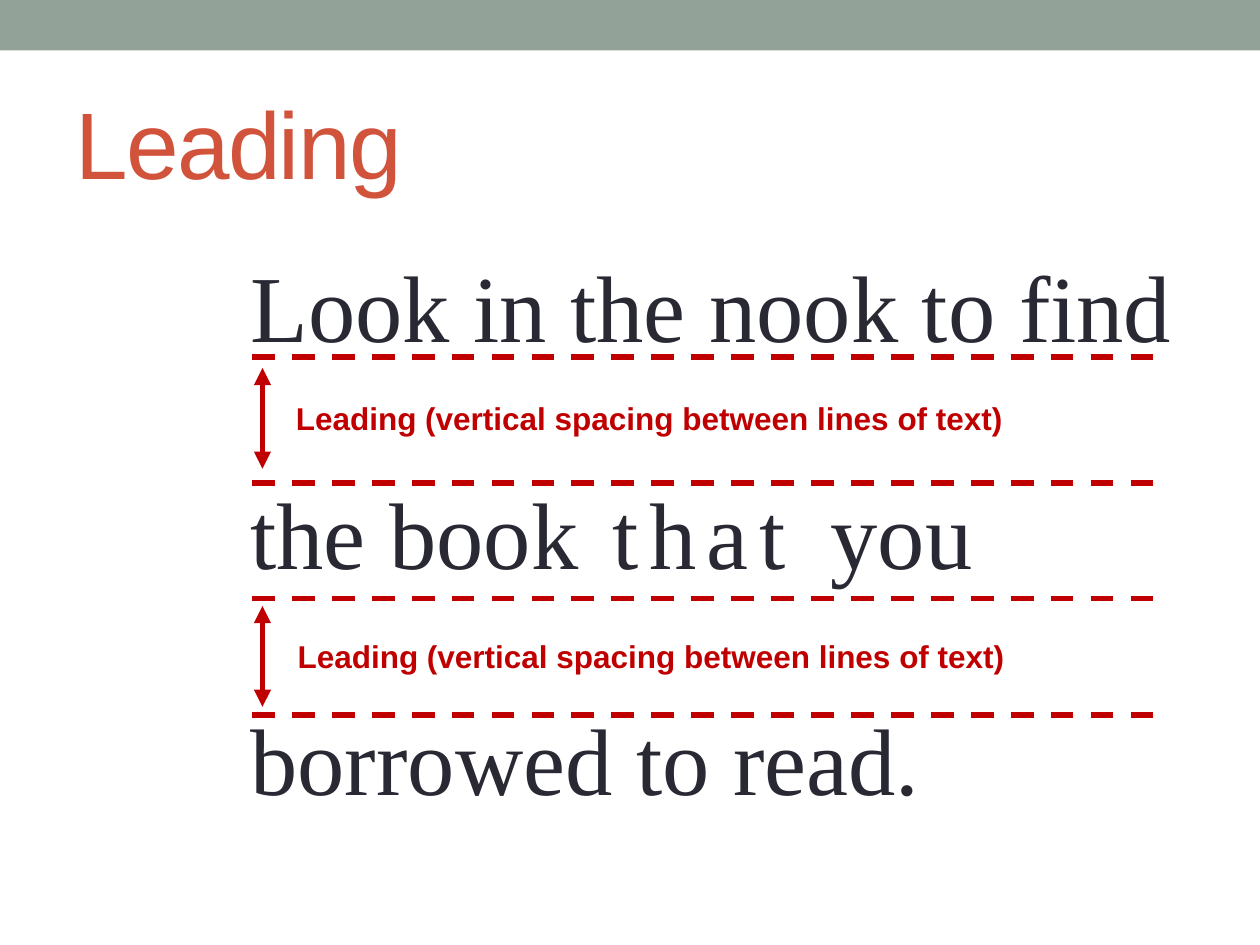
"""Build a slide that explains leading between lines of type."""
from dataclasses import dataclass

from lxml import etree
from pptx import Presentation
from pptx.dml.color import RGBColor
from pptx.enum.dml import MSO_LINE
from pptx.enum.shapes import MSO_CONNECTOR, MSO_SHAPE
from pptx.enum.text import MSO_ANCHOR, MSO_AUTO_SIZE, PP_ALIGN
from pptx.oxml.ns import qn
from pptx.util import Pt

RECT = MSO_SHAPE.RECTANGLE
STRAIGHT = MSO_CONNECTOR.STRAIGHT
DASH = MSO_LINE.DASH
LEFT = PP_ALIGN.LEFT
TOP, MIDDLE = MSO_ANCHOR.TOP, MSO_ANCHOR.MIDDLE
NO_FIT, GROW = MSO_AUTO_SIZE.NONE, MSO_AUTO_SIZE.SHAPE_TO_FIT_TEXT
TITLE_ONLY = 5


@dataclass(frozen=True)
class Theme:
    band: str = "93A299"
    title: str = "D2533C"
    ink: str = "292934"
    paper: str = "FFFFFF"
    accent: str = "C00000"
    sans: str = "Arial"
    serif: str = "Times New Roman"
    display: float = 54
    label: float = 18
    stroke: float = 3.25


class Deck:
    def __init__(self, prs, theme):
        self.theme = theme
        self.s = prs.slides.add_slide(prs.slide_layouts[TITLE_ONLY])

    def style(self, r, font, size, color, bold=False, spacing=0):
        r.font.name, r.font.size, r.font.bold = font, Pt(size), bold
        r.font.color.rgb = RGBColor.from_string(color)
        if spacing:
            r.font._element.set("spc", str(spacing * 100))

    def rect(self, x, y, w, h, color):
        sp = self.s.shapes.add_shape(RECT, Pt(x), Pt(y), Pt(w), Pt(h))
        sp.shadow.inherit = False
        sp.fill.solid()
        sp.fill.fore_color.rgb = RGBColor.from_string(color)
        sp.line.fill.background()
        return sp

    def title(self, text, x, y, w, h):
        sp = self.s.shapes.title
        sp.left, sp.top, sp.width, sp.height = Pt(x), Pt(y), Pt(w), Pt(h)
        tf = sp.text_frame
        tf.text = text
        tf.auto_size, tf.vertical_anchor = NO_FIT, MIDDLE
        p = tf.paragraphs[0]
        p.alignment = LEFT
        self.style(p.runs[0], self.theme.sans, self.theme.display,
                   self.theme.title, spacing=-1)

    def sample(self, lines, x, y, w, h, gap):
        tf = self.rect(x, y, w, h, self.theme.paper).text_frame
        tf.word_wrap, tf.vertical_anchor, tf.margin_top = True, TOP, Pt(3.4)
        for i, line in enumerate(lines):
            p = tf.add_paragraph() if i else tf.paragraphs[0]
            p.alignment = LEFT
            p.space_before = Pt(gap if i else 0)
            for text, spacing in line:
                r = p.add_run()
                r.text = text
                self.style(r, self.theme.serif, self.theme.display,
                           self.theme.ink, spacing=spacing)

    def line(self, x1, y1, x2, y2):
        c = self.s.shapes.add_connector(STRAIGHT, Pt(x1), Pt(y1), Pt(x2), Pt(y2))
        c.line.width = Pt(self.theme.stroke)
        c.line.color.rgb = RGBColor.from_string(self.theme.accent)
        etree.SubElement(c._element.spPr, qn("a:effectLst"))
        return c

    def guide(self, x1, x2, y):
        self.line(x1, y, x2, y).line.dash_style = DASH

    def arrow(self, x, y, length):
        ln = self.line(x, y, x, y + length).line._get_or_add_ln()
        for end in ("a:headEnd", "a:tailEnd"):
            etree.SubElement(ln, qn(end), type="triangle")

    def label(self, text, x, y, w, h):
        sp = self.s.shapes.add_textbox(Pt(x), Pt(y), Pt(w), Pt(h))
        tf = sp.text_frame
        tf.text = text
        tf.word_wrap, tf.auto_size = True, GROW
        self.style(tf.paragraphs[0].runs[0], self.theme.sans,
                   self.theme.label, self.theme.accent, bold=True)


def main():
    prs = Presentation()
    prs.slide_width, prs.slide_height = Pt(720), Pt(540)
    theme = Theme()
    deck = Deck(prs, theme)
    deck.rect(0, 0, 720, 28.8, theme.band)
    deck.title("Leading", 36, 42.25, 648, 77.75)
    lines = [
        [("Look in the nook to find", 0)],
        [("the book", 0), (" that ", 6), ("you", 0)],
        [("borrowed to read.", 0)],
    ]
    deck.sample(lines, 136, 138.25, 582, 360, gap=64.8)
    for y in (204, 276, 342, 408.75):
        deck.guide(144, 666, y)
    for x, y in ((162, 210.25), (163, 346.3)):
        deck.arrow(150, y, 57.6)
        deck.label("Leading (vertical spacing between lines of text)",
                   x, y + 14.4, 434, 29)
    prs.save("out.pptx")


if __name__ == "__main__":
    main()
